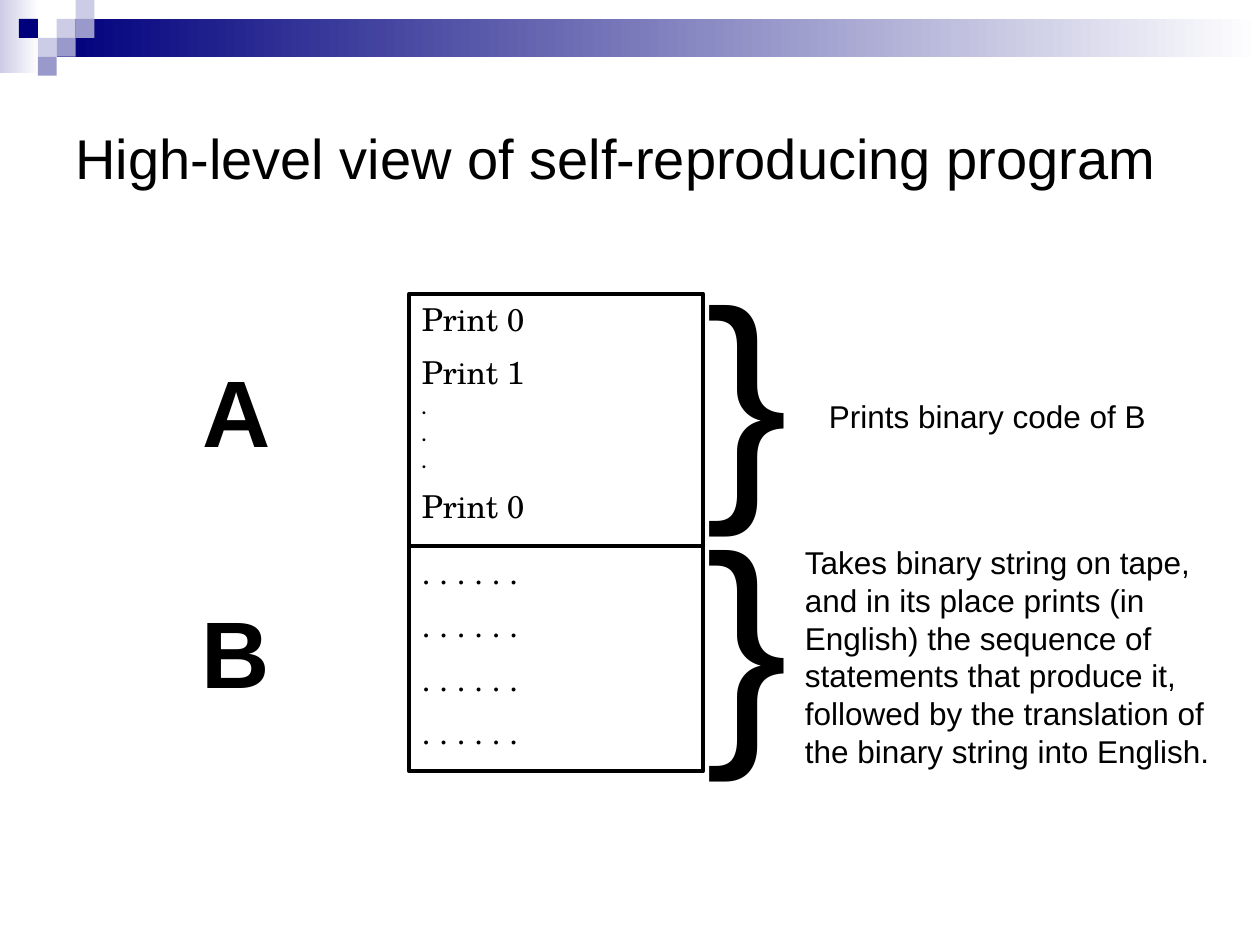
from pptx import Presentation
from pptx.dml.color import RGBColor as Rgb
from pptx.enum.shapes import MSO_SHAPE as Kind
from pptx.enum.text import MSO_ANCHOR as Anchor, PP_ALIGN as Align
from pptx.util import Pt

THEME = {
    "ink": "000000", "paper": "FFFFFF",
    "navy": "00007D", "mid": "9999CC", "pale": "CCCCE6",
    "sans": "Arial", "serif": "TeX Gyre Schola",
    "title": 32, "letter": 54, "body": 18, "dot": 9, "brace": 142,
}

TITLE = "High-level view of self-reproducing program"
# left, top, width, height, start colour
BANDS = [(0, 0, 22.3, 41.8, "pale"), (32.4, 10.8, 687.6, 21.6, "navy")]
# column, row, colour
CELL = 10.8
TILES = [
    (3, 1, "pale"), (4, 0, "pale"), (4, 1, "mid"), (2, 2, "pale"),
    (1, 1, "navy"), (3, 2, "mid"), (2, 3, "mid"),
]
# top, height, lines
BOX_X, BOX_W = 234, 167.8
BOXES = [
    (167.8, 144.4, ["Print 0", "Print 1", ".", ".", ".", "Print 0"]),
    (312.2, 128.6, [". . . . . ."] * 4),
]
# text, left, top, width, height, size, bold, wrap
LABELS = [
    ("}", 396, 131.8, 61.9, 177.8, "brace", False, False),
    ("Prints binary code of B", 466.6, 223.2, 195.8, 28.8, "body", False, False),
    ("}", 396, 272.2, 61.9, 177.8, "brace", False, False),
    ("Takes binary string on tape, and in its place prints (in English) "
     "the sequence of statements that produce it, followed by the "
     "translation of the binary string into English.",
     452.9, 306.7, 247, 138.2, "body", False, True),
    ("A", 108.5, 198, 53.3, 72, "letter", True, False),
    ("B", 108, 336.2, 53.3, 72, "letter", True, False),
]


def tint(name):
    return Rgb.from_string(THEME[name])


def style(para, face, size, bold=False):
    for run in para.runs:
        run.font.name = THEME[face]
        run.font.size = Pt(THEME[size])
        run.font.bold = bold
        run.font.color.rgb = tint("ink")


def add_rect(slide, *area):
    """Add a rectangle with no shadow and no line."""
    rect = slide.shapes.add_shape(Kind.RECTANGLE, *map(Pt, area))
    rect.shadow.inherit = False
    rect.line.fill.background()
    return rect


def add_band(slide, *area, hue):
    """Add a rectangle that fades from hue to white, left to right."""
    fill = add_rect(slide, *area).fill
    fill.gradient()
    fill.gradient_angle = 0
    for stop, name in zip(fill.gradient_stops, (hue, "paper")):
        stop.color.rgb = tint(name)


def add_tile(slide, col, row, hue):
    fill = add_rect(slide, col * CELL, row * CELL, CELL, CELL).fill
    fill.solid()
    fill.fore_color.rgb = tint(hue)


def add_code(slide, top, height, lines):
    """Add an outlined box of program lines, spaced by half their size."""
    box = add_rect(slide, BOX_X, top, BOX_W, height)
    box.fill.background()
    box.line.color.rgb = tint("ink")
    box.line.width = Pt(2.25)
    frame = box.text_frame
    frame.vertical_anchor = Anchor.TOP
    frame.text = "\n".join(lines)
    for para, line in zip(frame.paragraphs, lines):
        size = "dot" if line == "." else "body"
        para.alignment = Align.LEFT
        para.space_before = Pt(THEME[size] / 2)
        style(para, "serif", size, line == ".")


def add_label(slide, text, *area, size, bold=False, wrap=True):
    frame = slide.shapes.add_textbox(*map(Pt, area)).text_frame
    frame.word_wrap = wrap
    frame.text = text
    style(frame.paragraphs[0], "sans", size, bold)
    return frame


def main():
    deck = Presentation()
    deck.slide_width, deck.slide_height = Pt(720), Pt(540)
    slide = deck.slides.add_slide(deck.slide_layouts[6])
    for *area, hue in BANDS:
        add_band(slide, *area, hue=hue)
    for tile in TILES:
        add_tile(slide, *tile)
    title = add_label(slide, TITLE, 36, 36, 648, 108, size="title")
    title.vertical_anchor = Anchor.MIDDLE
    for box in BOXES:
        add_code(slide, *box)
    for text, *area, size, bold, wrap in LABELS:
        add_label(slide, text, *area, size=size, bold=bold, wrap=wrap)
    deck.save("out.pptx")


if __name__ == "__main__":
    main()
